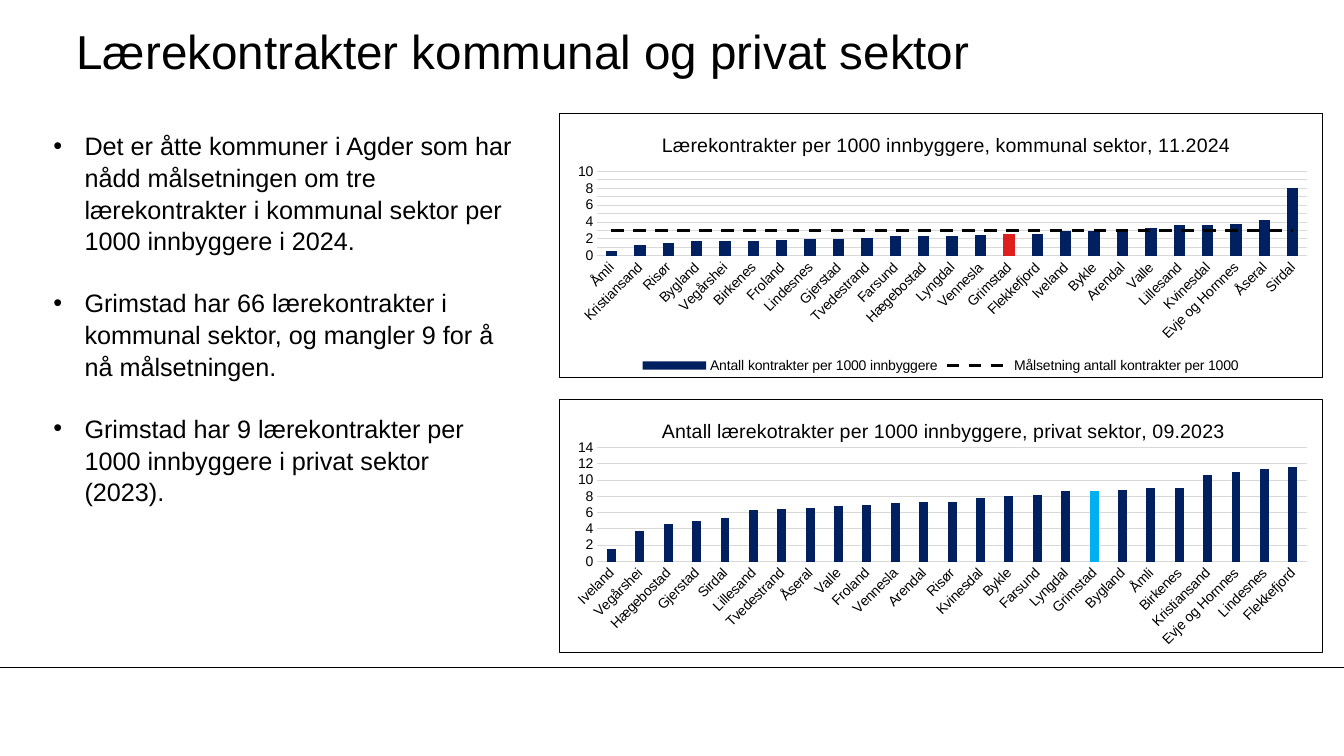
from lxml.etree import SubElement
from pptx import Presentation
from pptx.chart.data import CategoryChartData
from pptx.dml.color import RGBColor
from pptx.enum.chart import XL_CHART_TYPE, XL_LEGEND_POSITION, XL_TICK_MARK
from pptx.enum.dml import MSO_LINE
from pptx.enum.shapes import MSO_CONNECTOR
from pptx.enum.text import MSO_ANCHOR
from pptx.oxml import parse_xml
from pptx.oxml.ns import nsdecls, qn
from pptx.util import Inches, Pt

TITLE = "Lærekontrakter kommunal og privat sektor"
BULLETS = [
    "Det er åtte kommuner i Agder som har nådd målsetningen om tre lærekontrakter i kommunal sektor per 1000 innbyggere i 2024.",
    "Grimstad har 66 lærekontrakter i kommunal sektor, og mangler 9 for å nå målsetningen.",
    "Grimstad har 9 lærekontrakter per 1000 innbyggere i privat sektor (2023).",
]
HIGHLIGHT = "Grimstad"
PRIVATE = {
    "title": "Antall lærekotrakter per 1000 innbyggere, privat sektor, 09.2023",
    "series": "Series 1",
    "values": {
        "Iveland": 1.5, "Vegårshei": 3.7, "Hægebostad": 4.6, "Gjerstad": 5, "Sirdal": 5.4,
        "Lillesand": 6.3, "Tvedestrand": 6.5, "Åseral": 6.6, "Valle": 6.8, "Froland": 7,
        "Vennesla": 7.2, "Arendal": 7.3, "Risør": 7.3, "Kvinesdal": 7.8, "Bykle": 8,
        "Farsund": 8.2, "Lyngdal": 8.7, "Grimstad": 8.7, "Bygland": 8.8, "Åmli": 9,
        "Birkenes": 9.1, "Kristiansand": 10.6, "Evje og Hornnes": 11, "Lindesnes": 11.4,
        "Flekkefjord": 11.6,
    },
    "target": None, "highlight": "00B0F0", "maximum": 14, "unit": 2, "gap": 219, "overlap": -27,
    "frame": (5.54, 3.96, 7.58, 2.52), "plot": (0.05, 0.19, 0.93, 0.45), "heading": (0.13, 0.06),
}
MUNICIPAL = {
    "title": "Lærekontrakter per 1000 innbyggere, kommunal sektor, 11.2024",
    "series": "Antall kontrakter per 1000 innbyggere",
    "values": {
        "Åmli": 0.6, "Kristiansand": 1.3, "Risør": 1.5, "Bygland": 1.8, "Vegårshei": 1.8,
        "Birkenes": 1.8, "Froland": 1.9, "Lindesnes": 2, "Gjerstad": 2, "Tvedestrand": 2.1,
        "Farsund": 2.3, "Hægebostad": 2.3, "Lyngdal": 2.3, "Vennesla": 2.5, "Grimstad": 2.6,
        "Flekkefjord": 2.6, "Iveland": 2.9, "Bykle": 3, "Arendal": 3, "Valle": 3.3,
        "Lillesand": 3.6, "Kvinesdal": 3.7, "Evje og Hornnes": 3.8, "Åseral": 4.3, "Sirdal": 8,
    },
    "target": ("Målsetning antall kontrakter per 1000", 3),
    "highlight": "DF1F1D", "maximum": 10, "unit": 1, "gap": 150, "overlap": 0,
    "frame": (5.54, 1.12, 7.58, 2.63), "plot": (0.05, 0.22, 0.93, 0.32), "heading": (0.13, 0.06),
}
THEME = {
    "font": "Arial", "ink": "000000", "bar": "002060", "grid": "D9D9D9",
    "title": 34, "body": 18, "heading": 14, "label": 10, "line": 0.75, "target": 2.25,
}


def style_font(font, size):
    font.name, font.size, font.bold = THEME["font"], Pt(THEME[size]), False
    font.color.rgb = RGBColor.from_string(THEME["ink"])


def style_line(line, color, width="line"):
    line.color.rgb = RGBColor.from_string(THEME[color])
    line.width = Pt(THEME[width])


def add_text_box(page, frame, inset):
    text = page.shapes.add_textbox(*map(Inches, frame)).text_frame
    text.word_wrap = True
    if not inset:
        text.margin_left = text.margin_right = text.margin_top = text.margin_bottom = 0
    return text


def layout(values, inner=False):
    target = '<c:layoutTarget val="inner"/>' if inner else ""
    modes = '<c:xMode val="edge"/><c:yMode val="edge"/>'
    sizes = "".join(f'<c:{name} val="{value}"/>' for name, value in zip("xywh", values))
    return parse_xml(f'<c:layout {nsdecls("c")}><c:manualLayout>{target}{modes}{sizes}'
                     "</c:manualLayout></c:layout>")


def place(parent, new_layout, before):
    for old in parent.findall(qn("c:layout")):
        parent.remove(old)
    if before is None:
        parent.insert(0, new_layout)
    else:
        before.addnext(new_layout)


def turn_target_into_line(chart):
    bars = chart._chartSpace.xpath(".//c:barChart")[0]
    target = bars.findall(qn("c:ser"))[1]
    for bar_setting in target.findall(qn("c:invertIfNegative")):
        target.remove(bar_setting)
    lines = parse_xml(f'<c:lineChart {nsdecls("c")}><c:grouping val="standard"/>'
                      '<c:varyColors val="0"/></c:lineChart>')
    lines.append(target)
    SubElement(lines, qn("c:marker")).set("val", "1")
    for axis in bars.findall(qn("c:axId")):
        SubElement(lines, qn("c:axId")).set("val", axis.get("val"))
    bars.addnext(lines)
    series = chart.plots[1].series[0]
    style_line(series.format.line, "ink", "target")
    series.format.line.dash_style = MSO_LINE.DASH
    for old in target.findall(qn("c:marker")):
        target.remove(old)
    marker = parse_xml(f'<c:marker {nsdecls("c")}><c:symbol val="none"/></c:marker>')
    target.find(qn("c:spPr")).addnext(marker)
    series.smooth = False


def add_contract_chart(page, content):
    data = CategoryChartData(number_format="0.0")
    data.categories = list(content["values"])
    data.add_series(content["series"], list(content["values"].values()))
    if content["target"]:
        name, level = content["target"]
        data.add_series(name, [level] * len(content["values"]))
    chart = page.shapes.add_chart(
        XL_CHART_TYPE.COLUMN_CLUSTERED, *map(Inches, content["frame"]), data).chart
    style_font(chart.font, "label")

    heading = chart.chart_title.text_frame.paragraphs[0]
    span = heading.add_run()
    span.text = content["title"]
    style_font(span.font, "heading")
    title = chart._chartSpace.xpath("./c:chart/c:title")[0]
    place(title, layout(content["heading"]), title.find(qn("c:tx")))
    place(chart._chartSpace.xpath(".//c:plotArea")[0], layout(content["plot"], True), None)

    plot = chart.plots[0]
    plot.gap_width, plot.overlap = content["gap"], content["overlap"]
    plot.vary_by_categories = False
    bars = plot.series[0]
    bars.format.fill.solid()
    bars.format.fill.fore_color.rgb = RGBColor.from_string(THEME["bar"])
    fill = bars.points[list(content["values"]).index(HIGHLIGHT)].format.fill
    fill.solid()
    fill.fore_color.rgb = RGBColor.from_string(content["highlight"])

    for axis in (chart.category_axis, chart.value_axis):
        axis.major_tick_mark = axis.minor_tick_mark = XL_TICK_MARK.NONE
        style_font(axis.tick_labels.font, "label")
    style_line(chart.category_axis.format.line, "grid")
    chart._chartSpace.xpath(".//c:catAx/c:txPr/a:bodyPr")[0].set("rot", "-2700000")
    scale = chart.value_axis
    scale.minimum_scale, scale.maximum_scale = 0, content["maximum"]
    scale.major_unit = content["unit"]
    scale.tick_labels.number_format = "0"
    scale.tick_labels.number_format_is_linked = False
    scale.format.line.fill.background()
    style_line(scale.major_gridlines.format.line, "grid")

    chart.has_legend = bool(content["target"])
    if content["target"]:
        chart.legend.position = XL_LEGEND_POSITION.BOTTOM
        chart.legend.include_in_layout = False
        style_font(chart.legend.font, "label")
        turn_target_into_line(chart)
    border = parse_xml(
        f'<c:spPr {nsdecls("c", "a")}><a:noFill/><a:ln w="{Pt(THEME["line"])}"><a:solidFill>'
        f'<a:srgbClr val="{THEME["ink"]}"/></a:solidFill></a:ln></c:spPr>')
    chart._chartSpace.find(qn("c:chart")).addnext(border)


def main():
    """Build the slide on apprenticeship contracts."""
    deck = Presentation()
    deck.slide_width, deck.slide_height = Inches(13.33), Inches(7.5)
    page = deck.slides.add_slide(deck.slide_layouts[6])

    rule = page.shapes.add_connector(
        MSO_CONNECTOR.STRAIGHT, 0, Inches(6.62), deck.slide_width, Inches(6.62))
    style_line(rule.line, "ink")
    SubElement(rule._element.spPr, qn("a:effectLst"))

    heading = add_text_box(page, (0.76, 0.13, 11.1, 0.75), inset=False)
    heading.vertical_anchor = MSO_ANCHOR.MIDDLE
    span = heading.paragraphs[0].add_run()
    span.text = TITLE
    style_font(span.font, "title")

    body = add_text_box(page, (0.43, 1.23, 4.75, 4.04), inset=True)
    for index, bullet in enumerate(BULLETS):
        para = body.add_paragraph() if index else body.paragraphs[0]
        properties = para._p.get_or_add_pPr()
        properties.set("marL", str(Inches(0.31)))
        properties.set("indent", str(-Inches(0.31)))
        SubElement(properties, qn("a:buFont")).set("typeface", THEME["font"])
        SubElement(properties, qn("a:buChar")).set("char", "•")
        para.line_spacing = 1.05
        if index:
            para.space_before = Pt(21.6)
        span = para.add_run()
        span.text = bullet
        style_font(span.font, "body")

    for content in (PRIVATE, MUNICIPAL):
        add_contract_chart(page, content)
    deck.save("out.pptx")


if __name__ == "__main__":
    main()
